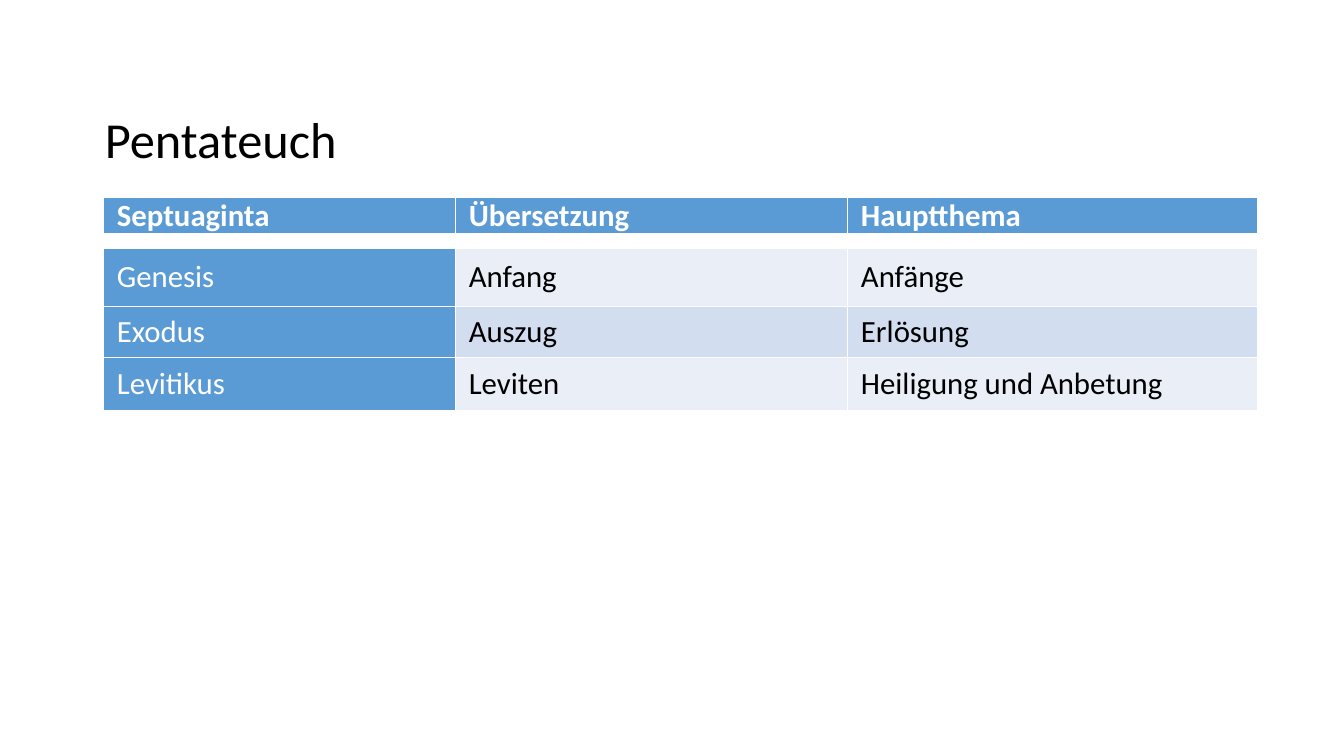
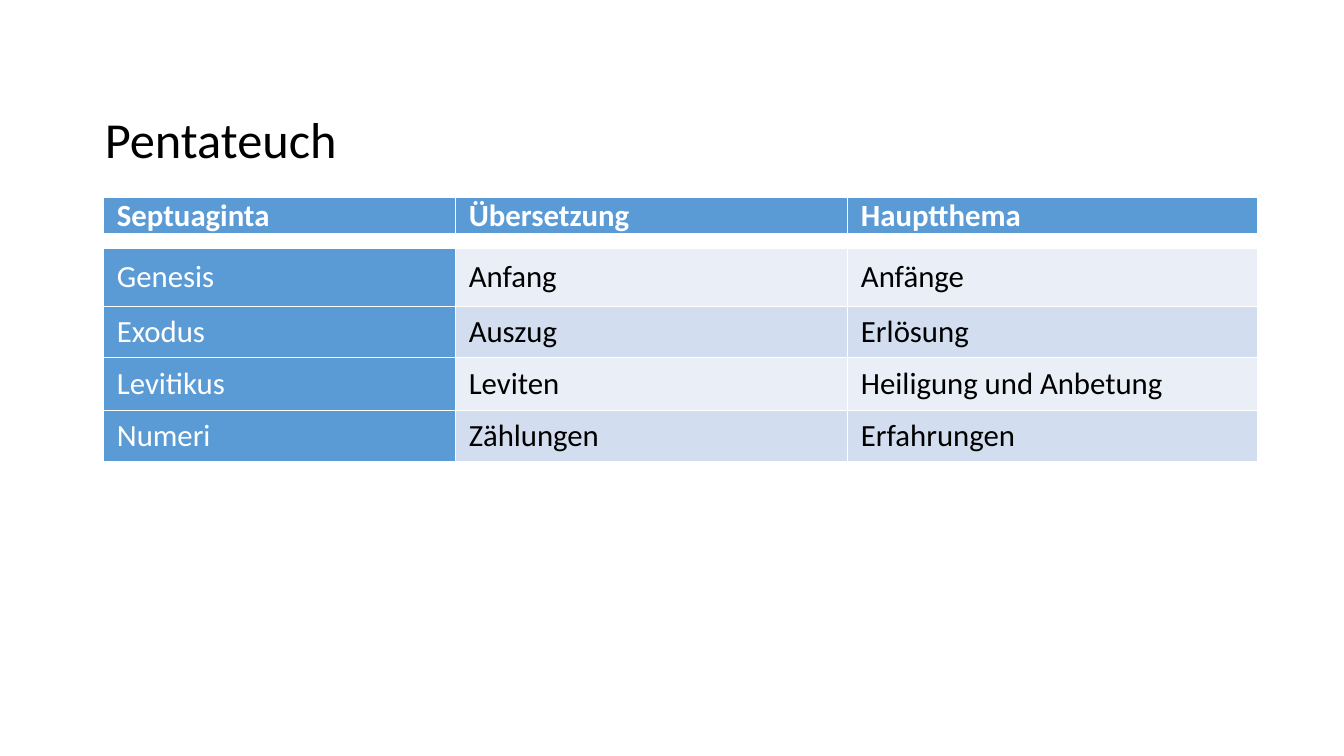
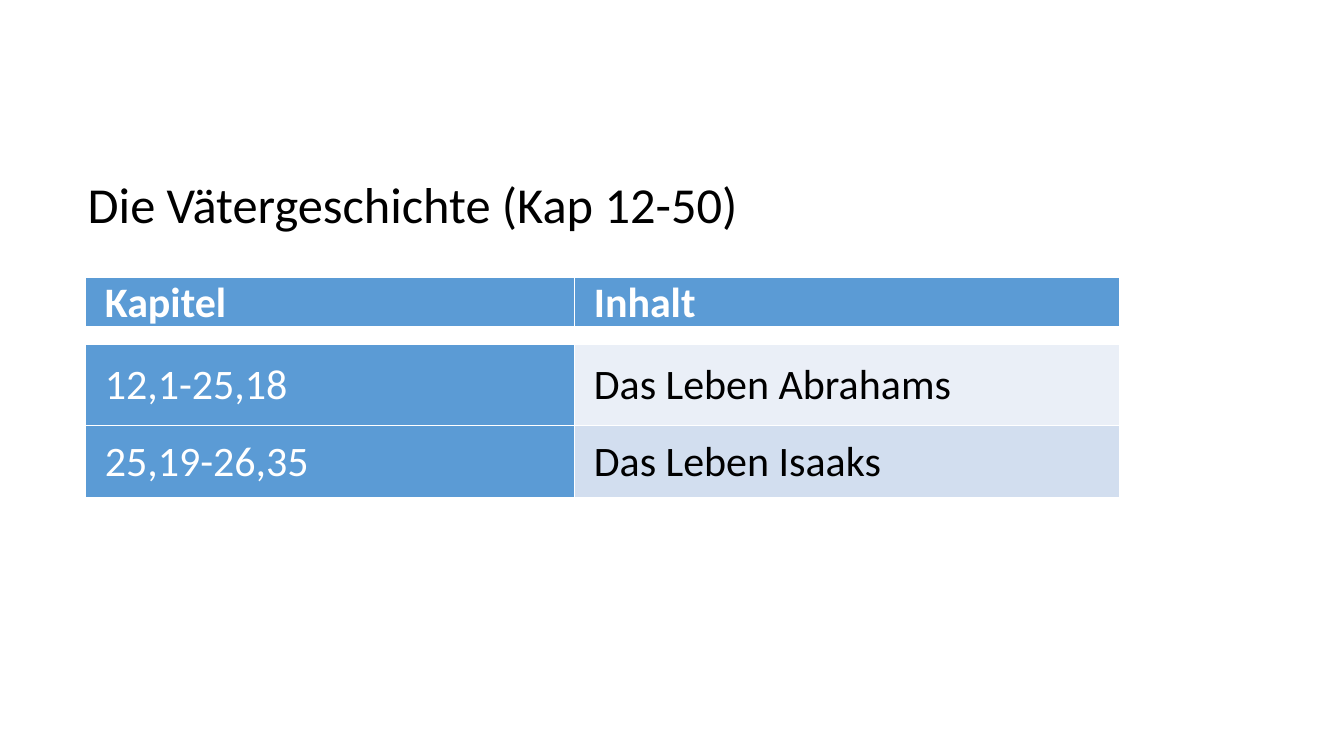
import pptx
import pptx.util
import pptx.dml.color
import pptx.enum.text
import lxml.etree

PX = 9144
FONT = "Calibri"
COLORS = {"blue": "5B9BD5", "light": "EAEFF7", "band": "D2DEEF", "white": "FFFFFF", "black": "000000"}
TITLE_FRAME = {
    "word_wrap": False,
    "auto_size": pptx.enum.text.MSO_AUTO_SIZE.SHAPE_TO_FIT_TEXT,
    "vertical_anchor": pptx.enum.text.MSO_ANCHOR.TOP,
}
PLACE = ("left", "top", "width", "height")
DRAWING = "{http://schemas.openxmlformats.org/drawingml/2006/main}"

BOOK_HEADER = ("Septuaginta", "Übersetzung", "Hauptthema")
BOOKS = [
    ("Genesis", "Anfang", "Anfänge"),
    ("Exodus", "Auszug", "Erlösung"),
    ("Levitikus", "Leviten", "Heiligung und Anbetung"),
    ("Numeri", "Zählungen", "Erfahrungen"),
]
BOOK_PAGE = {
    "title": "Pentateuch", "title_at": (94, 102, 252, 71), "title_fill": "white",
    "table_at": (103, 196), "columns": (349, 389, 406), "rows": (37, 13, 58, 51, 52, 51),
    "size": 22, "inset": 13, "header": BOOK_HEADER,
}
PAGES = [
    {**BOOK_PAGE, "body": BOOKS[:3]},
    {**BOOK_PAGE, "body": BOOKS},
    {
        "title": "Die Vätergeschichte (Kap 12-50)", "title_at": (77, 167, 671, 71), "title_fill": None,
        "table_at": (85, 275), "columns": (485, 540), "rows": (50, 17, 80, 72),
        "size": 30, "inset": 19, "header": ("Kapitel", "Inhalt"),
        "body": [("12,1-25,18", "Das Leben Abrahams"), ("25,19-26,35", "Das Leben Isaaks")],
    },
]


def write_text(para, text, size, color, bold=False):
    span = para.add_run()
    span.text = text
    style = {"name": FONT, "size": pptx.util.Pt(size), "bold": bold}
    for name, value in style.items():
        setattr(span.font, name, value)
    span.font.color.rgb = pptx.dml.color.RGBColor.from_string(COLORS[color])


def border_cell(cell, bottom_width):
    properties = cell._tc.get_or_add_tcPr()
    for index, (side, points) in enumerate(zip("LRTB", (1, 1, 1, bottom_width))):
        line = lxml.etree.Element(f"{DRAWING}ln{side}", w=str(pptx.util.Pt(points)))
        paint = lxml.etree.SubElement(line, f"{DRAWING}solidFill")
        lxml.etree.SubElement(paint, f"{DRAWING}srgbClr", val=COLORS["white"])
        properties.insert(index, line)


deck = pptx.Presentation()
deck.slide_width = 1333 * PX
deck.slide_height = 750 * PX

for content in PAGES:
    page = deck.slides.add_slide(deck.slide_layouts[5])
    title = page.shapes.title
    for name, value in zip(PLACE, content["title_at"]):
        setattr(title, name, value * PX)
    for name, value in TITLE_FRAME.items():
        setattr(title.text_frame, name, value)
    if content["title_fill"]:
        title.fill.solid()
        title.fill.fore_color.rgb = pptx.dml.color.RGBColor.from_string(COLORS[content["title_fill"]])
    para = title.text_frame.paragraphs[0]
    para.alignment = pptx.enum.text.PP_ALIGN.LEFT
    write_text(para, content["title"], 36, "black")

    columns = content["columns"]
    lines = [content["header"], ("",) * len(columns), *content["body"]]
    heights = content["rows"][:len(lines)]
    left, top = content["table_at"]
    table = page.shapes.add_table(
        len(lines), len(columns), left * PX, top * PX, sum(columns) * PX, sum(heights) * PX
    ).table
    for column, width in zip(table.columns, columns):
        column.width = width * PX
    for row, height in zip(table.rows, heights):
        row.height = height * PX

    cell_format = {
        "margin_left": content["inset"] * PX, "margin_right": content["inset"] * PX,
        "margin_top": 0, "margin_bottom": 0,
    }
    for row_index, texts in enumerate(lines):
        for column_index, text in enumerate(texts):
            cell = table.cell(row_index, column_index)
            for name, value in cell_format.items():
                setattr(cell, name, value)
            is_header = row_index == 0
            is_gap = row_index == 1
            is_blue = is_header or column_index == 0
            fill = "white" if is_gap else "blue" if is_blue else ("light", "band")[row_index % 2]
            cell.fill.solid()
            cell.fill.fore_color.rgb = pptx.dml.color.RGBColor.from_string(COLORS[fill])
            border_cell(cell, 3 if is_header else 1)
            para = cell.text_frame.paragraphs[0]
            if is_gap:
                lxml.etree.SubElement(para._p, f"{DRAWING}endParaRPr", sz="600")
                continue
            if not is_header:
                cell.vertical_anchor = pptx.enum.text.MSO_ANCHOR.MIDDLE
            write_text(para, text, content["size"], "white" if is_blue else "black", is_header)

deck.save("out.pptx")
